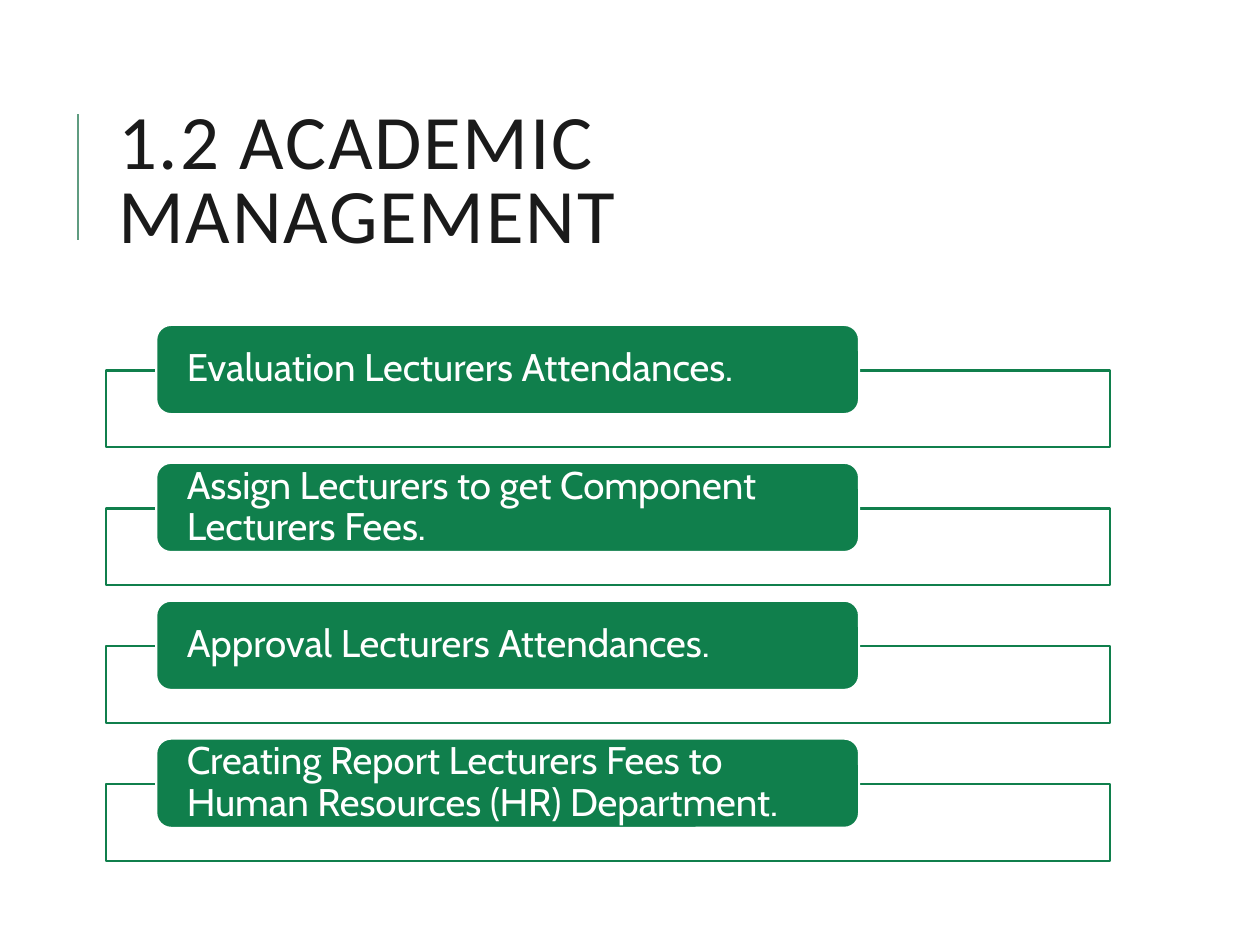
import dataclasses

import lxml.etree
import pptx
import pptx.dml.color
import pptx.enum.shapes
import pptx.enum.text
import pptx.oxml.ns
import pptx.util

Cm = pptx.util.Cm
Pt = pptx.util.Pt
RGB = pptx.dml.color.RGBColor.from_string
qn = pptx.oxml.ns.qn
SHAPES = pptx.enum.shapes.MSO_SHAPE
ANCHOR = pptx.enum.text.MSO_ANCHOR
ALIGN = pptx.enum.text.PP_ALIGN


@dataclasses.dataclass(frozen=True)
class Theme:
    green: RGB = RGB("107F4C")
    rule: RGB = RGB("5F9C80")
    ink: RGB = RGB("1A1A1A")
    white: RGB = RGB("FFFFFF")
    heading_size: Pt = Pt(44)
    task_size: Pt = Pt(22)
    heading_font: str = "Calibri"
    task_font: str = "Cabin"
    rule_width: Pt = Pt(1.5)
    outline_width: Pt = Pt(1.25)


theme = Theme()


def apply_format(target, values):
    for attribute, value in values.items():
        setattr(target, attribute, value)


def paint(shape, fill, outline):
    shape.shadow.inherit = False
    shape.fill.solid()
    shape.fill.fore_color.rgb = fill
    shape.line.color.rgb = outline
    shape.line.width = theme.outline_width


deck = pptx.Presentation()
apply_format(deck, {"slide_width": Cm(25.4), "slide_height": Cm(19.05)})
slide = deck.slides.add_slide(deck.slide_layouts[5])

heading = slide.shapes.title
apply_format(heading, {"left": Cm(2.13), "top": Cm(1.63), "width": Cm(20.24), "height": Cm(4.17)})
heading.text = "1.2 ACADEMIC MANAGEMENT"
apply_format(heading.text_frame, {
    "word_wrap": True,
    "auto_size": pptx.enum.text.MSO_AUTO_SIZE.NONE,
    "vertical_anchor": ANCHOR.MIDDLE,
})
heading_line = heading.text_frame.paragraphs[0]
apply_format(heading_line, {"alignment": ALIGN.LEFT, "line_spacing": 0.8})
heading_run = heading_line.runs[0]
apply_format(heading_run.font, {"name": theme.heading_font, "size": theme.heading_size})
heading_run.font.color.rgb = theme.ink
heading_run.font._element.set("spc", "100")

heading_rule = slide.shapes.add_connector(
    pptx.enum.shapes.MSO_CONNECTOR.STRAIGHT, Cm(1.57), Cm(4.83), Cm(1.57), Cm(2.29))
heading_rule.line.color.rgb = theme.rule
heading_rule.line.width = theme.rule_width
lxml.etree.SubElement(heading_rule._element.spPr, qn("a:effectLst"))

tasks = [
    "Evaluation Lecturers Attendances.",
    "Assign Lecturers to get Component Lecturers Fees.",
    "Approval Lecturers Attendances.",
    "Creating Report Lecturers Fees to Human Resources (HR) Department.",
]
first_top, pitch, frame_drop = 6.55, 2.78, 0.92
task_list = slide.shapes.add_group_shape()

for position, task in enumerate(tasks):
    top = first_top + position * pitch

    frame = task_list.shapes.add_shape(
        SHAPES.RECTANGLE, Cm(2.13), Cm(top + frame_drop), Cm(20.24), Cm(1.55))
    paint(frame, theme.white, theme.green)
    frame_color = frame._element.spPr.find(qn("a:solidFill"))[0]
    lxml.etree.SubElement(frame_color, qn("a:alpha"), val="90000")

    label = task_list.shapes.add_shape(
        SHAPES.ROUNDED_RECTANGLE, Cm(3.15), Cm(top), Cm(14.17), Cm(1.8))
    paint(label, theme.green, theme.white)
    apply_format(label.text_frame, {
        "text": task,
        "word_wrap": True,
        "vertical_anchor": ANCHOR.MIDDLE,
        "margin_left": Cm(0.53),
        "margin_right": Cm(0.53),
        "margin_top": 0,
        "margin_bottom": 0,
    })
    label_line = label.text_frame.paragraphs[0]
    apply_format(label_line, {"alignment": ALIGN.LEFT, "line_spacing": 0.9})
    label_font = label_line.runs[0].font
    apply_format(label_font, {"name": theme.task_font, "size": theme.task_size})
    label_font.color.rgb = theme.white

deck.save("out.pptx")
